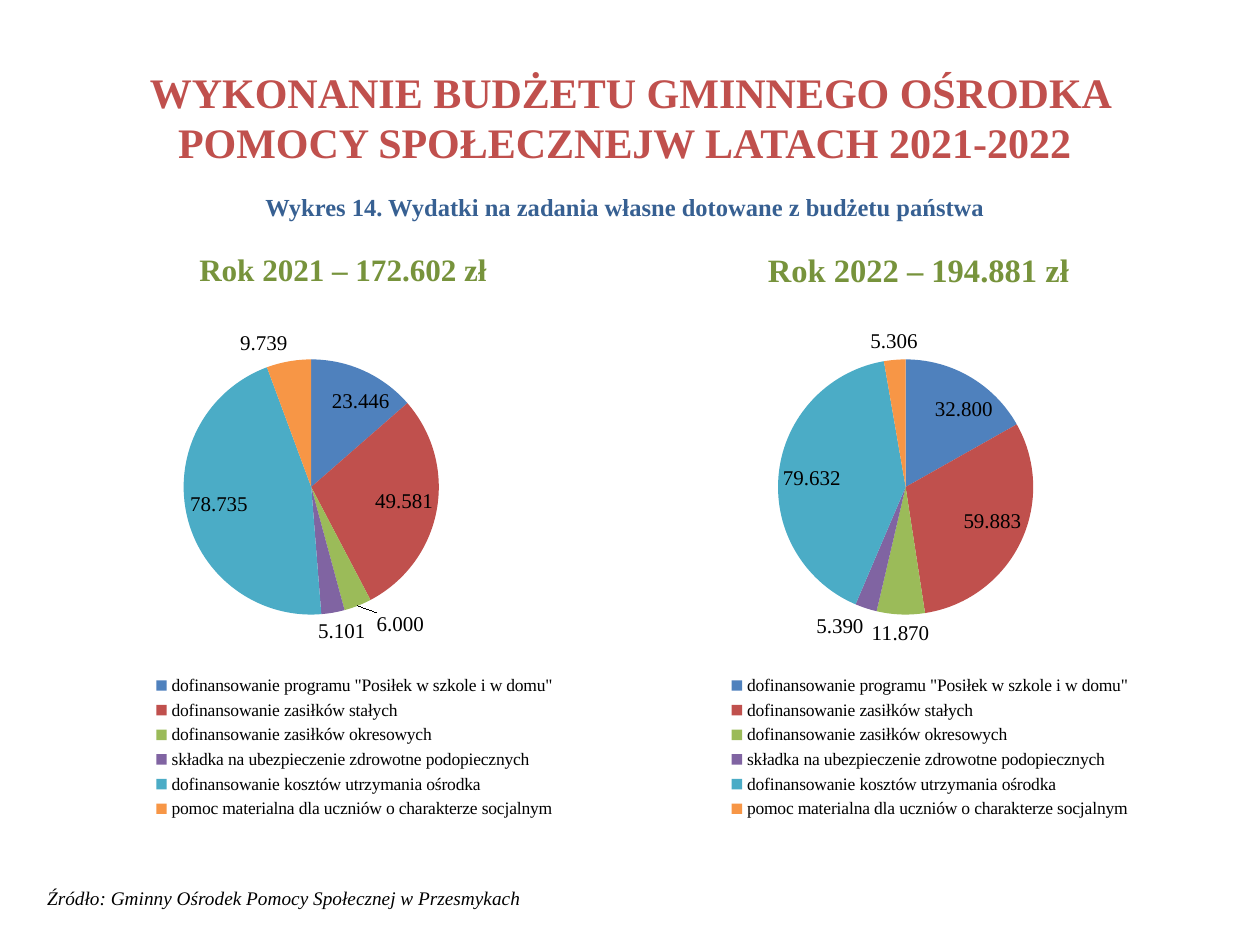
import pptx
import pptx.chart.data
import pptx.dml.color
import pptx.enum.chart
import pptx.enum.text
import pptx.oxml
import pptx.util
from pptx.util import Cm

COLORS = {
    "title": "C0504D", "subtitle": "376092", "year": "77933C", "text": "000000",
    "slices": ["4F81BD", "C0504D", "9BBB59", "8064A2", "4BACC6", "F79646"],
}
CATEGORIES = [
    'dofinansowanie programu "Posiłek w szkole i w domu"',
    "dofinansowanie zasiłków stałych",
    "dofinansowanie zasiłków okresowych",
    "składka na ubezpieczenie zdrowotne podopiecznych",
    "dofinansowanie kosztów utrzymania ośrodka",
    "pomoc materialna dla uczniów o charakterze socjalnym",
]
# heading, heading size, left edge (cm), pie position across the chart, values
YEARS = [
    ("Rok 2021 – 172.602 zł", 17.8, 1.3, 0.213,
     [23446, 49581, 6000, 5101, 78735, 9739]),
    ("Rok 2022 – 194.881 zł", 18.6, 12.9, 0.247,
     [32800, 59883, 11870, 5390, 79632, 5306]),
]
CHART_WIDTH = 11.23


def rgb(value):
    return pptx.dml.color.RGBColor.from_string(value)


def layout_xml(x, y, w, h, inner=False):
    """Manual chart layout in fractions of the chart area."""
    target = '<c:layoutTarget val="inner"/>' if inner else ""
    sizes = "".join(f'<c:{tag} val="{val}"/>' for tag, val in
                    {"x": x, "y": y, "w": w, "h": h}.items())
    return pptx.oxml.parse_xml(
        '<c:layout xmlns:c="http://schemas.openxmlformats.org/drawingml/2006/chart">'
        f'<c:manualLayout>{target}<c:xMode val="edge"/><c:yMode val="edge"/>'
        f"{sizes}</c:manualLayout></c:layout>")


class SlideBuilder:
    font_name = "Times New Roman"

    def __init__(self, prs):
        self.s = prs.slides.add_slide(prs.slide_layouts[5])

    def style(self, font, size, color="text", **extra):
        values = {"name": self.font_name, "size": pptx.util.Pt(size), **extra}
        for name, value in values.items():
            setattr(font, name, value)
        font.color.rgb = rgb(COLORS[color])

    def fill_text(self, sp, text, size, color, align="CENTER", **extra):
        tf = sp.text_frame
        tf.word_wrap = True
        tf.vertical_anchor = pptx.enum.text.MSO_ANCHOR.MIDDLE
        p = tf.paragraphs[0]
        p.alignment = getattr(pptx.enum.text.PP_ALIGN, align)
        r = p.add_run()
        r.text = text
        self.style(r.font, size, color, **extra)

    def title(self, text, left, top, width, height):
        sp = self.s.shapes.title
        sp.left, sp.top, sp.width, sp.height = map(Cm, (left, top, width, height))
        self.fill_text(sp, text, 24, "title", bold=True)

    def text(self, text, left, top, width, height, size, color, **extra):
        sp = self.s.shapes.add_textbox(*map(Cm, (left, top, width, height)))
        self.fill_text(sp, text, size, color, **extra)

    def pie(self, values, left, top, width, height, plot_x):
        data = pptx.chart.data.CategoryChartData()
        data.categories = CATEGORIES
        data.add_series("Series 1", values)
        chart = self.s.shapes.add_chart(
            pptx.enum.chart.XL_CHART_TYPE.PIE,
            *map(Cm, (left, top, width, height)), data).chart
        chart.has_title = False
        chart.font.name, chart.font.size = "Calibri", pptx.util.Pt(18)

        chart.has_legend = True
        legend = chart.legend
        legend.position = pptx.enum.chart.XL_LEGEND_POSITION.BOTTOM
        legend.include_in_layout = False
        self.style(legend.font, 10)
        legend_pos = legend._element.find("{*}legendPos")
        legend_pos.addnext(layout_xml(0.13, 0.7, 0.78, 0.3))

        plot_area = chart._chartSpace.chart.plotArea
        for old in plot_area.findall("{*}layout"):
            plot_area.remove(old)
        plot_area.insert(0, layout_xml(plot_x, 0.09, 0.46, 0.5, inner=True))

        plot = chart.plots[0]
        plot.vary_by_categories = True
        for i, color in enumerate(COLORS["slices"]):
            fill = plot.series[0].points[i].format.fill
            fill.solid()
            fill.fore_color.rgb = rgb(color)
        labels = plot.series[0].data_labels
        labels.show_value = True
        labels.number_format = '0"."000'
        labels.number_format_is_linked = False
        labels.position = pptx.enum.chart.XL_LABEL_POSITION.BEST_FIT
        self.style(labels.font, 12)


def main():
    prs = pptx.Presentation()
    prs.slide_width, prs.slide_height = Cm(25.4), Cm(19.05)
    b = SlideBuilder(prs)
    b.title("WYKONANIE BUDŻETU GMINNEGO OŚRODKA POMOCY SPOŁECZNEJW LATACH 2021-2022 ",
            1.27, 0.76, 22.86, 3.18)
    b.text("Wykres 14. Wydatki na zadania własne dotowane z budżetu państwa",
           1.1, 3.73, 23, 0.86, 14, "subtitle", bold=True)
    for heading, size, left, plot_x, values in YEARS:
        b.text(heading, left, 4.93, CHART_WIDTH, 1, size, "year", bold=True)
        b.pie(values, left, 6.32, CHART_WIDTH, 10.29, plot_x)
    b.text("Źródło: Gminny Ośrodek Pomocy Społecznej w Przesmykach",
           0.7, 17.73, 12.7, 0.74, 11, "text", align="LEFT", italic=True)
    prs.save("out.pptx")


if __name__ == "__main__":
    main()
